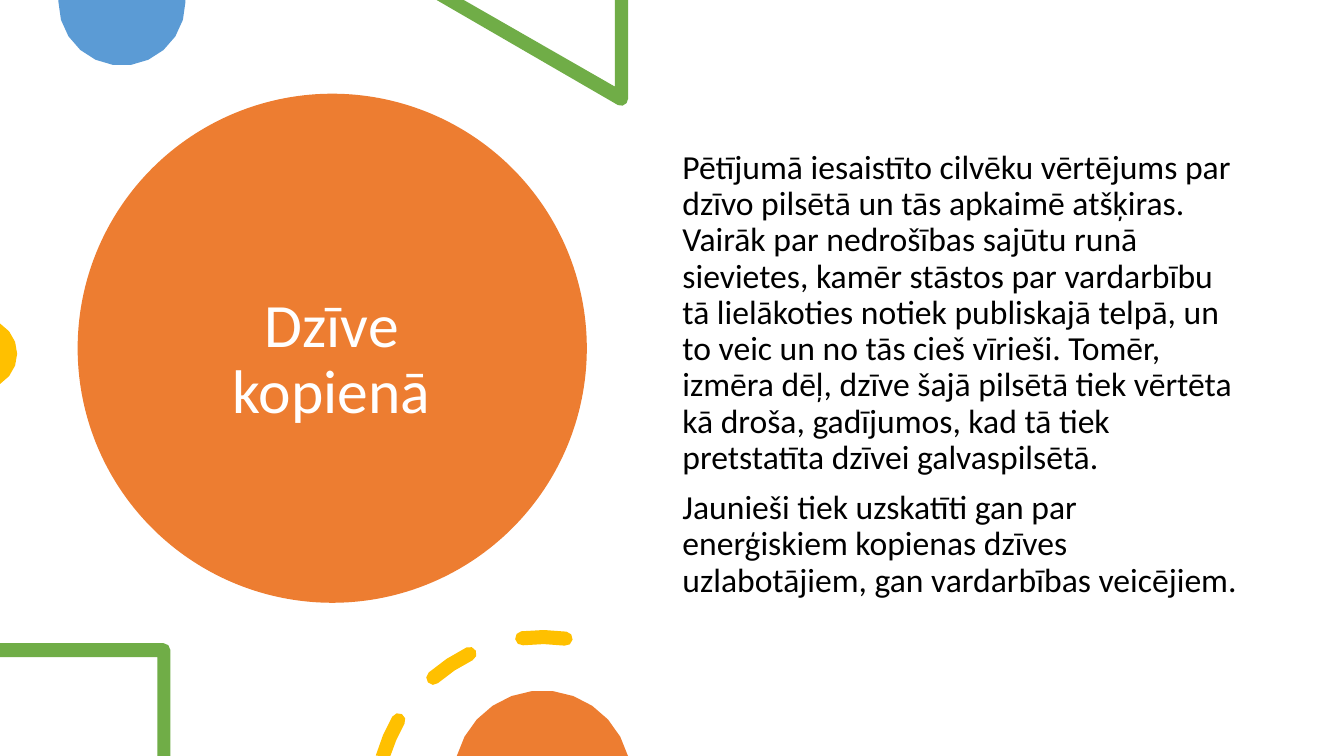
from math import ceil, cos, radians, sin, sqrt

from pptx import Presentation
from pptx.dml.color import RGBColor
from pptx.enum.shapes import MSO_SHAPE
from pptx.enum.text import MSO_ANCHOR, MSO_AUTO_SIZE, PP_ALIGN
from pptx.util import Pt

PX = 9144
OVAL = MSO_SHAPE.OVAL
TOP, MIDDLE = MSO_ANCHOR.TOP, MSO_ANCHOR.MIDDLE
LEFT, CENTER = PP_ALIGN.LEFT, PP_ALIGN.CENTER
ORANGE, BLUE, GREEN, YELLOW = "ED7D31", "5B9BD5", "70AD47", "FFC000"
color = RGBColor.from_string

deck = Presentation()
deck.slide_width, deck.slide_height = 1333 * PX, 750 * PX
page = deck.slides.add_slide(deck.slide_layouts[5])


def write_text(box, place, paragraphs, size, fill, align=LEFT, anchor=TOP, margin_top=5):
    box.left, box.top, box.width, box.height = (value * PX for value in place)
    frame = box.text_frame
    frame.word_wrap = True
    frame.auto_size = MSO_AUTO_SIZE.NONE
    frame.vertical_anchor = anchor
    frame.margin_left = frame.margin_right = 10 * PX
    frame.margin_top, frame.margin_bottom = margin_top * PX, 5 * PX
    for index, text in enumerate(paragraphs):
        para = frame.add_paragraph() if index else frame.paragraphs[0]
        para.alignment = align
        para.line_spacing = 0.9
        para.space_before = Pt(10 if index else 0)
        span = para.add_run()
        span.text = text
        span.font.name = "Calibri"
        span.font.size = Pt(size)
        span.font.color.rgb = color(fill)


def draw_outline(fill, *contours):
    builder = None
    for contour in contours:
        points = []
        for part in contour:
            if len(part) == 2:
                points.append(part)
                continue
            x, y, radius, start, end = part
            steps = ceil(abs(end - start) * sqrt(radius) / 130)
            for step in range(steps + 1):
                angle = radians(start + (end - start) * step / steps)
                points.append((x + radius * cos(angle), y + radius * sin(angle)))
        points = [(round(x * PX), round(y * PX)) for x, y in points]
        if builder is None:
            builder = page.shapes.build_freeform(*points[0], scale=1.0)
        else:
            builder.move_to(*points[0])
        builder.add_line_segments(points[1:], close=True)
    shape = builder.convert_to_shape()
    shape.shadow.inherit = False
    shape.fill.solid()
    shape.fill.fore_color.rgb = color(fill)
    shape.line.fill.background()


title = page.shapes.title
circle = page.shapes.add_shape(OVAL, 77 * PX, 93 * PX, 505 * PX, 505 * PX)
circle.shadow.inherit = False
circle.fill.solid()
circle.fill.fore_color.rgb = color(ORANGE)
circle.line.fill.background()
title._element.addprevious(circle._element)
write_text(title, (152, 135, 354, 445), ["Dzīve kopienā"], 44, "FFFFFF",
           align=CENTER, anchor=MIDDLE)

draw_outline(BLUE, [(184, 0), (121, 2, 63, 0, 180), (58, 0)])
draw_outline(GREEN, [(610, 0), (610, 86), (460, 0), (433, 0),
                     (616, 98, 7, 115, 0), (623, 0)])
draw_outline(YELLOW, [(-18, 351, 35, -59, 59)])

body = page.shapes.add_textbox(0, 0, PX, PX)
write_text(body, (667, 90, 575, 535), [
    "Pētījumā iesaistīto cilvēku vērtējums par dzīvo pilsētā un tās apkaimē atšķiras. "
    "Vairāk par nedrošības sajūtu runā sievietes, kamēr stāstos par vardarbību tā "
    "lielākoties notiek publiskajā telpā, un to veic un no tās cieš vīrieši. Tomēr, "
    "izmēra dēļ, dzīve šajā pilsētā tiek vērtēta kā droša, gadījumos, kad tā tiek "
    "pretstatīta dzīvei galvaspilsētā.",
    "Jaunieši tiek uzskatīti gan par enerģiskiem kopienas dzīves uzlabotājiem, "
    "gan vardarbības veicējiem.",
], 24, "000000", margin_top=59)

draw_outline(GREEN, [(0, 638), (0, 652), (156, 652), (156, 750), (169, 750),
                     (162, 645, 7, 0, -90)])

ring_x, ring_y, ring_radius, half_stroke = 538, 797, 165, 7
inner, outer = ring_radius - half_stroke, ring_radius + half_stroke
dashes = []
for start, end in ((-164, -150), (-131, -116), (-97, -82)):
    caps = []
    for angle, turn in ((end, 0), (start, 180)):
        x = ring_x + ring_radius * cos(radians(angle))
        y = ring_y + ring_radius * sin(radians(angle))
        caps.append((x, y, half_stroke, angle + turn, angle + turn + 180))
    dash = [(ring_x, ring_y, outer, start, end), caps[0],
            (ring_x, ring_y, inner, end, start)]
    if start == -164:
        dash[2] = (ring_x, ring_y, inner, end, -163)
    else:
        dash.append(caps[1])
    dashes.append(dash)
draw_outline(YELLOW, *dashes)

draw_outline(ORANGE, [(538, 773, 88, -165, -15)])

deck.save("out.pptx")
